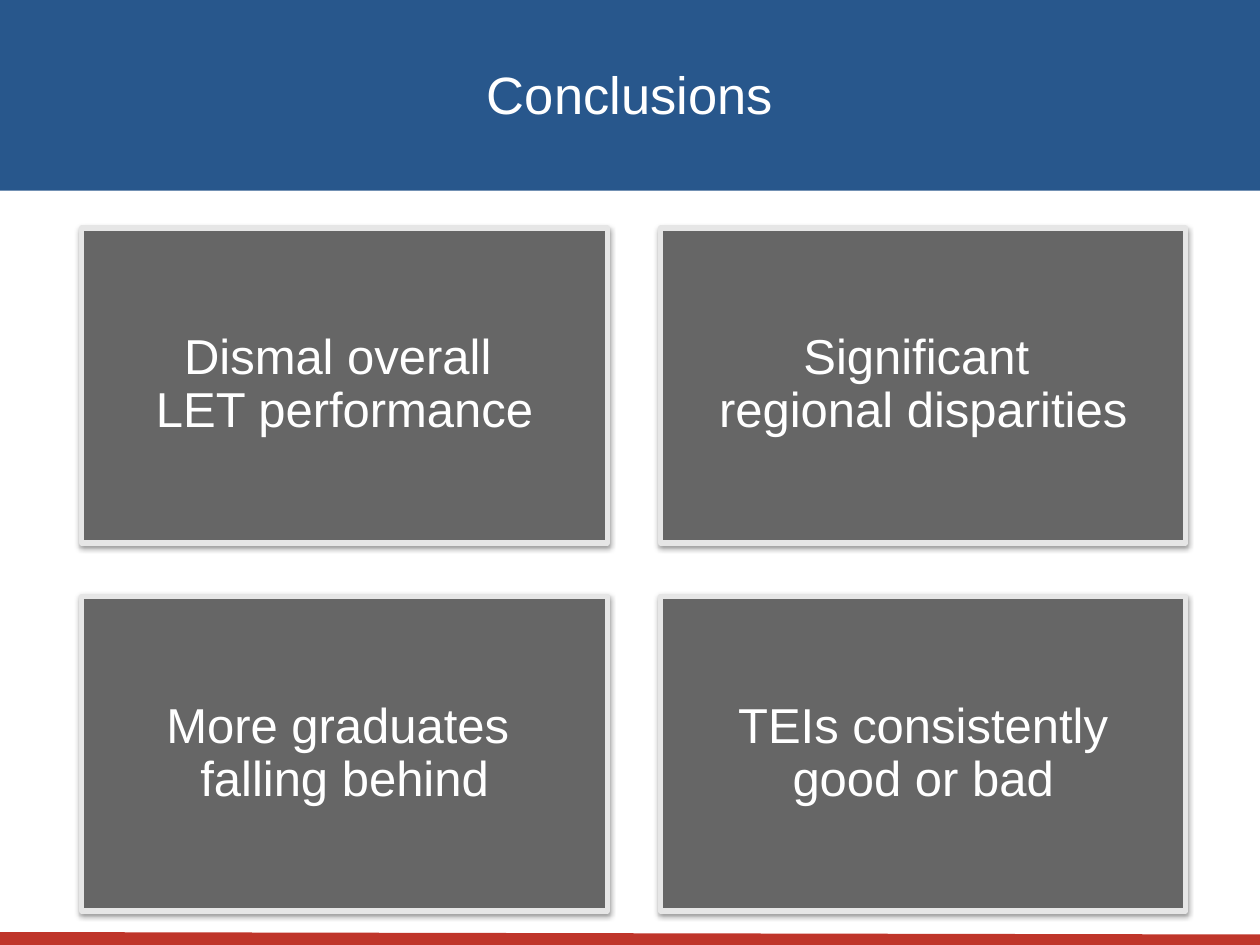
from dataclasses import dataclass

from lxml import etree
from pptx import Presentation
from pptx.dml.color import RGBColor
from pptx.enum.shapes import MSO_CONNECTOR, MSO_SHAPE
from pptx.enum.text import MSO_ANCHOR, PP_ALIGN
from pptx.oxml.ns import qn
from pptx.util import Pt

RECT = MSO_SHAPE.RECTANGLE
LINE = MSO_CONNECTOR.STRAIGHT
CENTER = PP_ALIGN.CENTER
MIDDLE = MSO_ANCHOR.MIDDLE
TITLE_ONLY = 5


@dataclass(frozen=True)
class Theme:
    font: str = "Arial"
    head: float = 30
    body: float = 28
    text: str = "FFFFFF"
    band: str = "28578C"
    card: str = "666666"
    edge: str = "E6E6E6"
    rule: str = "BF352A"
    shade: str = "000000"


THEME = Theme()
CARDS = [
    "Dismal overall \nLET performance",
    "Significant \nregional disparities",
    "More graduates \nfalling behind",
    "TEIs consistently\ngood or bad",
]


def paint(fill, color):
    fill.solid()
    fill.fore_color.rgb = RGBColor.from_string(color)


def write(frame, text, size, pad, space=1.0):
    """Fill a text frame with centred lines; pad is (side, top) in points."""
    frame.text = text
    frame.word_wrap = True
    frame.vertical_anchor = MIDDLE
    frame.margin_left = frame.margin_right = Pt(pad[0])
    frame.margin_top = frame.margin_bottom = Pt(pad[1])
    for para in frame.paragraphs:
        para.alignment = CENTER
        para.line_spacing = space
        for run in para.runs:
            run.font.name = THEME.font
            run.font.size = Pt(size)
            run.font.color.rgb = RGBColor.from_string(THEME.text)


def add_shadow(shape):
    shape.shadow.inherit = False
    effects = shape._element.spPr.find(qn("a:effectLst"))
    outer = etree.SubElement(
        effects, qn("a:outerShdw"), blurRad=str(Pt(3.1)), dist=str(Pt(1.6)),
        dir="5400000", rotWithShape="0")
    color = etree.SubElement(outer, qn("a:srgbClr"), val=THEME.shade)
    etree.SubElement(color, qn("a:alpha"), val="38000")


def add_title(slide, text, left, top, width, height):
    title = slide.shapes.title
    title.left, title.top = Pt(left), Pt(top)
    title.width, title.height = Pt(width), Pt(height)
    paint(title.fill, THEME.band)
    write(title.text_frame, text, THEME.head, (7.2, 3.6))


def add_card(slide, text, left, top, width, height):
    card = slide.shapes.add_shape(
        RECT, Pt(left), Pt(top), Pt(width), Pt(height))
    paint(card.fill, THEME.card)
    paint(card.line.fill, THEME.edge)
    card.line.width = Pt(3)
    add_shadow(card)
    write(card.text_frame, text, THEME.body, (8.4, 8.4), 0.9)


def add_grid(slide, texts, left, top, width, height, cols=2, gap=30.4):
    """Lay the cards out in equal cells filling the box."""
    rows = -(-len(texts) // cols)
    wide = (width - gap * (cols - 1)) / cols
    high = (height - gap * (rows - 1)) / rows
    for i, text in enumerate(texts):
        row, col = divmod(i, cols)
        add_card(slide, text, left + col * (wide + gap),
                 top + row * (high + gap), wide, high)


def add_rule(slide, left, top, width, height):
    """Draw the slightly sloping foot line across the box."""
    rule = slide.shapes.add_connector(
        LINE, Pt(left), Pt(top), Pt(left + width), Pt(top + height))
    paint(rule.line.fill, THEME.rule)
    rule.line.width = Pt(9)
    etree.SubElement(rule._element.spPr, qn("a:effectLst"))


def main():
    deck = Presentation()
    deck.slide_width, deck.slide_height = Pt(720), Pt(540)
    slide = deck.slides.add_slide(deck.slide_layouts[TITLE_ONLY])
    add_grid(slide, CARDS, 46.8, 130.3, 630.8, 390.4)
    add_title(slide, "Conclusions", 0, -2.3, 720, 111.2)
    add_rule(slide, -0.7, 537.1, 721.4, 1.4)
    deck.save("out.pptx")


if __name__ == "__main__":
    main()
